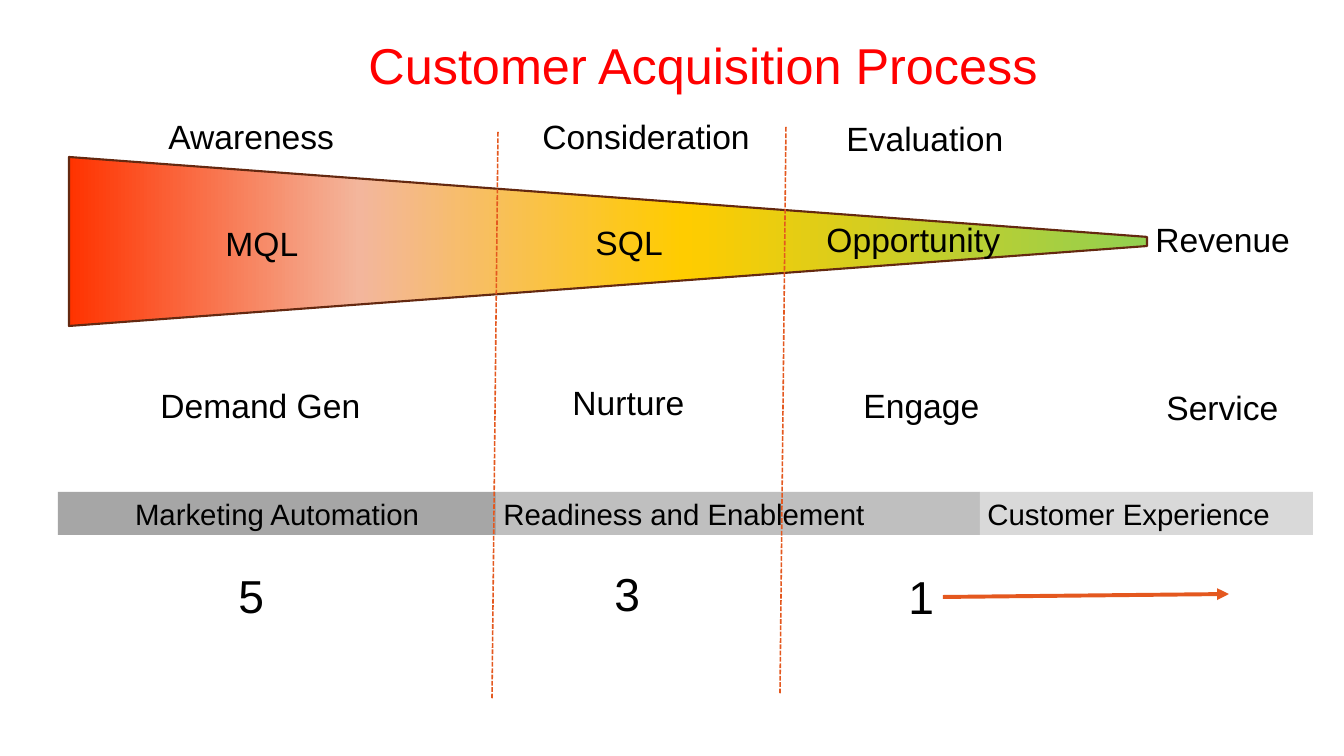
"""Build the customer acquisition process funnel slide."""
import pptx
import pptx.dml.color
import pptx.enum.dml
import pptx.enum.shapes
import pptx.enum.text
import pptx.util
from dataclasses import dataclass
from lxml import etree


@dataclass(frozen=True)
class Theme:
    font: str = "Arial"
    text: str = "000000"
    title: str = "FF0000"
    accent: str = "E4581F"
    outline: str = "642810"
    title_size: int = 48
    label_size: int = 32
    bar_size: int = 28
    count_size: int = 44
    funnel: tuple = ((0, "92D050"), (43, "FFCC00"), (73, "F3B69C"), (100, "FF3300"))


THEME = Theme()
SCALE = 914400 / 75.6
PAGE_SIZE = (1344, 756)
TITLE = ("Customer Acquisition Process", 361, 30, 695)
LABELS = [
    ("Awareness", 161, 112, 183),
    ("Consideration", 535, 112, 225),
    ("Evaluation", 839, 114, 174),
    ("MQL", 218, 219, 88),
    ("SQL", 588, 218, 83),
    ("Opportunity", 819, 215, 191),
    ("Revenue", 1148, 215, 151),
    ("Demand Gen", 153, 381, 217),
    ("Nurture", 565, 378, 129),
    ("Engage", 856, 381, 132),
    ("Service", 1159, 383, 129),
]
COUNTS = [("5", 231, 564, 42), ("3", 607, 562, 42), ("1", 901, 565, 42)]
BARS = [
    ("Marketing Automation", 438, "A6A6A6", pptx.enum.text.PP_ALIGN.CENTER),
    ("Readiness and Enablement", 484, "BFBFBF", pptx.enum.text.PP_ALIGN.LEFT),
    ("Customer Experience", 333, "D9D9D9", pptx.enum.text.PP_ALIGN.LEFT),
]
BAR_LEFT, BAR_TOP, BAR_HEIGHT = 58, 492, 43
FUNNEL_LEFT, FUNNEL_TOP, FUNNEL_LENGTH, FUNNEL_MOUTH = 69, 157, 1078, 169
DIVIDERS = [(498, 132), (786, 127)]
DIVIDER_LEAN, DIVIDER_HEIGHT = 6, 567
ARROW = (943, 597, 1229, 594)


def px(*values):
    return [pptx.util.Emu(round(value * SCALE)) for value in values]


def rgb(value):
    return pptx.dml.color.RGBColor.from_string(value)


def write(box, text, size, align=pptx.enum.text.PP_ALIGN.LEFT, wrap=False):
    frame = box.text_frame
    frame.text = text
    frame.word_wrap = wrap
    frame.auto_size = pptx.enum.text.MSO_AUTO_SIZE.SHAPE_TO_FIT_TEXT
    para = frame.paragraphs[0]
    para.alignment = align
    font = para.runs[0].font
    font.name = THEME.font
    font.size = pptx.util.Pt(size)
    return font


def add_label(page, label, size, height):
    text, left, top, width = label
    box = page.shapes.add_textbox(*px(left, top, width, height))
    font = write(box, text, size)
    font.color.rgb = rgb(THEME.text)
    return font


def add_funnel(page):
    shift = (FUNNEL_LENGTH - FUNNEL_MOUTH) / 2
    funnel = page.shapes.add_shape(
        pptx.enum.shapes.MSO_SHAPE.TRAPEZOID,
        *px(FUNNEL_LEFT + shift, FUNNEL_TOP - shift, FUNNEL_MOUTH, FUNNEL_LENGTH))
    funnel.rotation = 90
    funnel.adjustments[0] = 0.473
    funnel.shadow.inherit = False
    funnel.line.color.rgb = rgb(THEME.outline)
    funnel.line.width = pptx.util.Pt(2)
    funnel.fill.gradient()
    funnel.fill.gradient_angle = 270
    stops = funnel._element.spPr.find(".//" + pptx.oxml.ns.qn("a:gsLst"))
    for stop in list(stops):
        stops.remove(stop)
    for position, color in THEME.funnel:
        stop = etree.SubElement(stops, pptx.oxml.ns.qn("a:gs"), pos=str(position * 1000))
        etree.SubElement(stop, pptx.oxml.ns.qn("a:srgbClr"), val=color)


def add_bars(page):
    left = BAR_LEFT
    for text, width, color, align in BARS:
        bar = page.shapes.add_shape(
            pptx.enum.shapes.MSO_SHAPE.RECTANGLE, *px(left, BAR_TOP, width, BAR_HEIGHT))
        bar.shadow.inherit = False
        bar.fill.solid()
        bar.fill.fore_color.rgb = rgb(color)
        bar.line.fill.background()
        write(bar, text, THEME.bar_size, align, True).color.rgb = rgb(THEME.text)
        left += width


def add_line(page, ends, width):
    line = page.shapes.add_connector(pptx.enum.shapes.MSO_CONNECTOR.STRAIGHT, *px(*ends))
    line.line.color.rgb = rgb(THEME.accent)
    line.line.width = pptx.util.Pt(width)
    etree.SubElement(line._element.spPr, pptx.oxml.ns.qn("a:effectLst"))
    return line


def main():
    deck = pptx.Presentation()
    deck.slide_width, deck.slide_height = px(*PAGE_SIZE)
    page = deck.slides.add_slide(deck.slide_layouts[6])
    add_funnel(page)
    add_label(page, TITLE, THEME.title_size, 69).color.rgb = rgb(THEME.title)
    add_bars(page)
    for label in LABELS:
        add_label(page, label, THEME.label_size, 48)
    for count in COUNTS:
        add_label(page, count, THEME.count_size, 64)
    arrow = add_line(page, ARROW, 3.75)
    etree.SubElement(arrow.line._get_or_add_ln(), pptx.oxml.ns.qn("a:tailEnd"), type="triangle")
    for left, top in DIVIDERS:
        ends = (left, top, left - DIVIDER_LEAN, top + DIVIDER_HEIGHT)
        divider = add_line(page, ends, 1.5)
        divider.line.dash_style = pptx.enum.dml.MSO_LINE.SQUARE_DOT
    deck.save("out.pptx")


if __name__ == "__main__":
    main()
